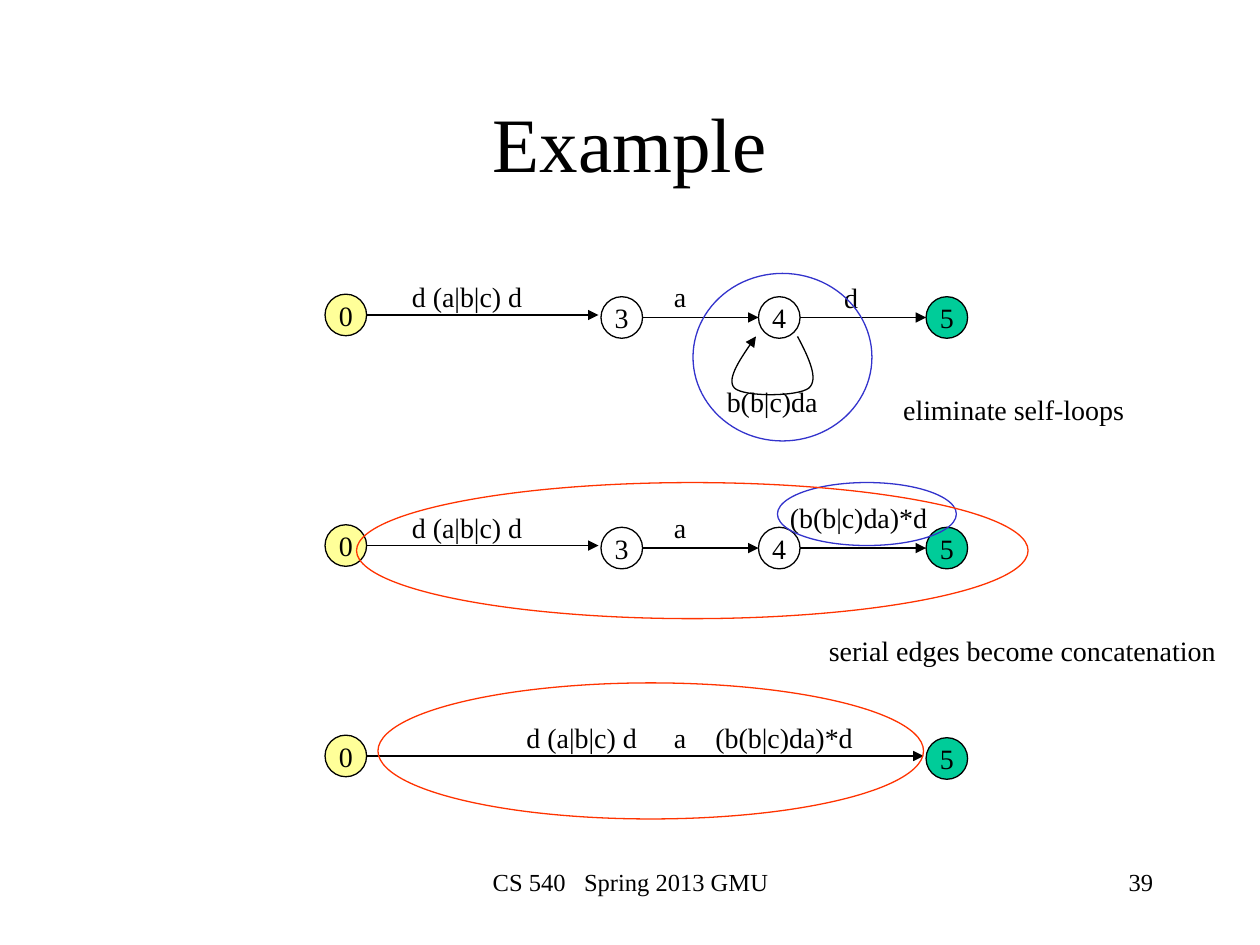
from lxml import etree
from pptx import Presentation
from pptx.dml.color import RGBColor
from pptx.enum.shapes import MSO_CONNECTOR, MSO_SHAPE
from pptx.enum.text import MSO_ANCHOR, MSO_AUTO_SIZE, PP_ALIGN
from pptx.oxml.ns import qn
from pptx.util import Inches, Pt

LEFT, CENTER, RIGHT = PP_ALIGN.LEFT, PP_ALIGN.CENTER, PP_ALIGN.RIGHT
TOP, MIDDLE = MSO_ANCHOR.TOP, MSO_ANCHOR.MIDDLE
FIT_TEXT = MSO_AUTO_SIZE.SHAPE_TO_FIT_TEXT
OVAL, STRAIGHT = MSO_SHAPE.OVAL, MSO_CONNECTOR.STRAIGHT

BLACK = RGBColor(0x00, 0x00, 0x00)
START_YELLOW = RGBColor(0xFF, 0xFF, 0x99)
FINAL_GREEN = RGBColor(0x00, 0xCC, 0x99)
LOOP_BLUE = RGBColor(0x33, 0x33, 0xCC)
SERIAL_RED = RGBColor(0xFF, 0x33, 0x00)

FONT = "Times New Roman"
STATE_SIZE = 0.33
STATE_LEFT = {"0": 2.58, "3": 4.77, "4": 6.02, "5": 7.35}
STATE_FILL = {"0": START_YELLOW, "5": FINAL_GREEN}
STATE_DROP = 0.02  # states after the first sit slightly lower
LABEL_RISE = 0.33
LABEL_HEIGHT = 0.37
LOOP_ROW, STARRED_ROW, MERGED_ROW = 2.5, 4.33, 6


def write(shape, text, size, align, anchor):
    frame = shape.text_frame
    frame.text = text
    frame.vertical_anchor = anchor
    paragraph = frame.paragraphs[0]
    paragraph.alignment = align
    font = paragraph.runs[0].font
    font.name, font.size, font.color.rgb = FONT, Pt(size), BLACK


def add_text(slide, text, left, top, width, height, size, align, anchor=TOP):
    box = slide.shapes.add_textbox(*map(Inches, (left, top, width, height)))
    write(box, text, size, align, anchor)
    box.text_frame.word_wrap = True


def add_label(slide, text, left, top, width):
    label = slide.shapes.add_textbox(*map(Inches, (left, top, width, LABEL_HEIGHT)))
    write(label, text, 16, LEFT, TOP)
    label.text_frame.word_wrap = False
    label.text_frame.auto_size = FIT_TEXT


def set_outline(shape, color=BLACK):
    shape.line.color.rgb = color
    shape.line.width = Pt(0.75)


def add_arrowhead(shape):
    etree.SubElement(shape.line._get_or_add_ln(), qn("a:tailEnd"), type="triangle")


def add_oval(slide, left, top, width, height, color=BLACK, fill=None):
    oval = slide.shapes.add_shape(OVAL, *map(Inches, (left, top, width, height)))
    oval.shadow.inherit = False
    if fill is None:
        oval.fill.background()
    else:
        oval.fill.solid()
        oval.fill.fore_color.rgb = fill
    set_outline(oval, color)
    return oval


def add_state(slide, name, row):
    top = row - STATE_SIZE / 2 + (0 if name == "0" else STATE_DROP)
    state = add_oval(slide, STATE_LEFT[name], top, STATE_SIZE, STATE_SIZE,
                     fill=STATE_FILL.get(name))
    write(state, name, 16, CENTER, MIDDLE)
    state.text_frame.word_wrap = False


def add_edge(slide, source, target, row):
    start = STATE_LEFT[source] + STATE_SIZE
    end = STATE_LEFT[target]
    y = row
    if source == "0":
        end -= STATE_DROP
    else:
        y += STATE_DROP
    edge = slide.shapes.add_connector(STRAIGHT, *map(Inches, (start, y, end, y)))
    set_outline(edge)
    add_arrowhead(edge)
    etree.SubElement(edge._element.spPr, qn("a:effectLst"))


def add_automaton(slide, states, row):
    """Draw one row of states joined by arrows from left to right."""
    for name in states:
        add_state(slide, name, row)
    for source, target in zip(states, states[1:]):
        add_edge(slide, source, target, row)


def bezier(start, control_1, control_2, end, steps=16):
    """Points along a cubic curve, without its start."""
    for step in range(1, steps + 1):
        t = step / steps
        u = 1 - t
        yield tuple(
            Inches(u**3 * a + 3 * u * u * t * b + 3 * u * t * t * c + t**3 * d)
            for a, b, c, d in zip(start, control_1, control_2, end))


def add_self_loop(slide):
    curves = [
        ((6.33, 2.67), (6.42, 2.84), (6.5, 3.01), (6.42, 3.08)),
        ((6.42, 3.08), (6.33, 3.15), (5.9, 3.15), (5.83, 3.08)),
        ((5.83, 3.08), (5.76, 3.01), (5.88, 2.84), (6, 2.67)),
    ]
    points = [point for curve in curves for point in bezier(*curve)]
    builder = slide.shapes.build_freeform(*map(Inches, curves[0][0]))
    builder.add_line_segments(points, close=False)
    loop = builder.convert_to_shape()
    loop.shadow.inherit = False
    loop.fill.background()
    set_outline(loop)
    add_arrowhead(loop)


def main():
    deck = Presentation()
    deck.slide_width, deck.slide_height = Inches(10), Inches(7.5)
    slide = deck.slides.add_slide(deck.slide_layouts[6])

    add_text(slide, "CS 540   Spring 2013 GMU", 3.42, 6.83, 3.17, 0.5, 14, CENTER)
    add_text(slide, "39", 7.17, 6.83, 2.08, 0.5, 14, RIGHT)
    add_text(slide, "Example", 0.75, 0.5, 8.5, 1.25, 44, CENTER, MIDDLE)

    add_automaton(slide, "0345", LOOP_ROW)
    add_self_loop(slide)
    add_automaton(slide, "0345", STARRED_ROW)
    add_automaton(slide, "05", MERGED_ROW)

    for row, prefix_left in ((LOOP_ROW, 3.17), (STARRED_ROW, 3.17), (MERGED_ROW, 4.08)):
        add_label(slide, "d (a|b|c) d", prefix_left, row - LABEL_RISE, 1.08)
        add_label(slide, "a", 5.25, row - LABEL_RISE, 0.3)
    add_label(slide, "d", 6.6, 2.18, 0.31)
    add_label(slide, "b(b|c)da", 5.67, 3, 0.93)
    add_label(slide, "(b(b|c)da)*d", 6.17, 3.92, 1.3)
    add_label(slide, "(b(b|c)da)*d", 5.58, 5.67, 1.3)

    add_oval(slide, 5.5, 2.17, 1.42, 1.33, LOOP_BLUE)
    add_oval(slide, 6.17, 3.83, 1.42, 0.5, LOOP_BLUE)
    add_oval(slide, 2.83, 3.83, 5.33, 1.08, SERIAL_RED)
    add_oval(slide, 3, 5.42, 4.33, 1.08, SERIAL_RED)

    add_label(slide, "eliminate self-loops", 7.07, 3.07, 1.97)
    add_label(slide, "serial edges become concatenation", 6.48, 4.98, 3.29)

    deck.save("out.pptx")


if __name__ == "__main__":
    main()
